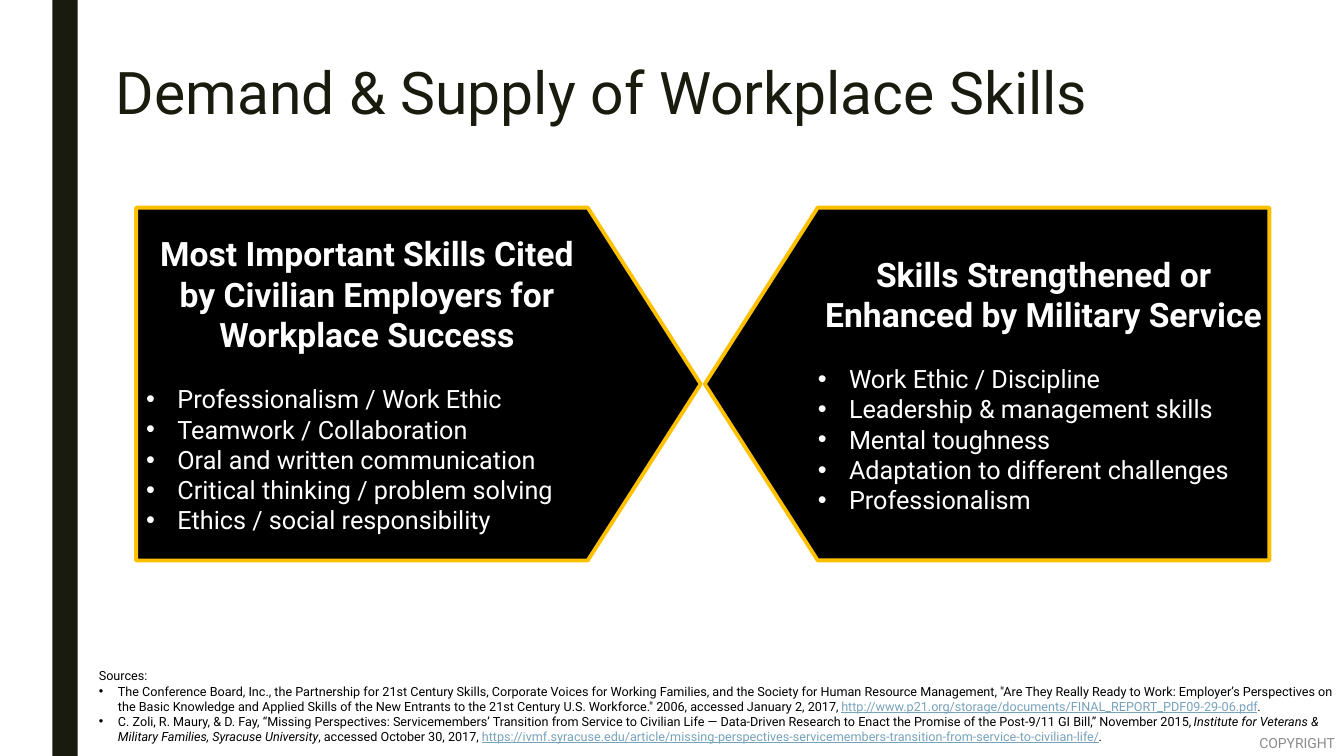
from dataclasses import dataclass
from lxml.etree import SubElement
from pptx import Presentation
from pptx.dml.color import RGBColor
from pptx.enum.shapes import MSO_SHAPE
from pptx.enum.text import MSO_ANCHOR, MSO_AUTO_SIZE, PP_ALIGN
from pptx.oxml.ns import qn
from pptx.util import Inches, Pt


@dataclass(frozen=True)
class Theme:
    font: str = "Roboto"
    dark: str = "191B0E"
    black: str = "000000"
    white: str = "FFFFFF"
    gold: str = "FFC000"
    link: str = "77A2BB"
    grey: str = "8C8C8C"
    title: int = 42
    heading: int = 24
    skill: int = 18
    copyright: int = 10
    source: int = 9


theme = Theme()


def add_run(paragraph, text, size, color, **formats):
    run = paragraph.add_run()
    run.text = text
    formats = {"name": theme.font, "size": Pt(size), **formats}
    for attribute, value in formats.items():
        setattr(run.font, attribute, value)
    run.font.color.rgb = RGBColor.from_string(color)


def set_list_style(paragraph, indent):
    paragraph.alignment = PP_ALIGN.LEFT
    paragraph.space_before = Pt(0)
    properties = paragraph._p.get_or_add_pPr()
    properties.set("marL", str(Inches(indent)))
    properties.set("indent", str(-Inches(indent)))
    if indent:
        SubElement(properties, qn("a:buFont")).set("typeface", "Arial")
        SubElement(properties, qn("a:buChar")).set("char", "•")
    else:
        SubElement(properties, qn("a:buNone"))


deck = Presentation()
deck.slide_width, deck.slide_height = Inches(13.33), Inches(7.5)
slide = deck.slides.add_slide(deck.slide_layouts[1])
title, sources = slide.placeholders

side_bar = slide.shapes.add_shape(
    MSO_SHAPE.RECTANGLE, Inches(0.52), 0, Inches(0.25), deck.slide_height)
side_bar.shadow.inherit = False
side_bar.fill.solid()
side_bar.fill.fore_color.rgb = RGBColor.from_string(theme.dark)
side_bar.line.fill.background()

copyright_mark = slide.shapes.add_textbox(0, 0, 0, 0)
text_areas = [
    (title, (1.05, 0.5, 10.84, 1.53), MSO_ANCHOR.TOP),
    (sources, (0.88, 6.58, 12.46, 0.86), MSO_ANCHOR.TOP),
    (copyright_mark, (12.23, 7.15, 1.11, 0.44), MSO_ANCHOR.MIDDLE),
]
for area, place, anchor in text_areas:
    for attribute, value in zip(("left", "top", "width", "height"), place):
        setattr(area, attribute, Inches(value))
    formats = {"word_wrap": True, "auto_size": MSO_AUTO_SIZE.NONE,
               "vertical_anchor": anchor}
    for attribute, value in formats.items():
        setattr(area.text_frame, attribute, value)

heading = title.text_frame.paragraphs[0]
heading.alignment = PP_ALIGN.LEFT
add_run(heading, "Demand & Supply of Workplace Skills", theme.title, theme.dark)

arrows = [
    (2.4, 270, "vert", 0.1,
     "Most Important Skills Cited by Civilian Employers for Workplace Success",
     ["Professionalism / Work Ethic", "Teamwork / Collaboration",
      "Oral and written communication", "Critical thinking / problem solving",
      "Ethics / social responsibility"]),
    (8.04, 90, "vert270", 0,
     "Skills Strengthened or Enhanced by Military Service",
     ["Work Ethic / Discipline", "Leadership & management skills",
      "Mental toughness", "Adaptation to different challenges",
      "Professionalism"]),
]
for left, rotation, direction, top_margin, claim, skills in arrows:
    arrow = slide.shapes.add_shape(
        MSO_SHAPE.FLOWCHART_OFFPAGE_CONNECTOR,
        Inches(left), Inches(1.01), Inches(3.5), Inches(5.6))
    arrow.rotation = rotation
    arrow.shadow.inherit = False
    arrow.fill.solid()
    arrow.fill.fore_color.rgb = RGBColor.from_string(theme.black)
    arrow.line.color.rgb = RGBColor.from_string(theme.gold)
    arrow.line.width = Pt(2.75)
    frame = arrow.text_frame
    formats = {"margin_left": 0, "margin_top": Inches(top_margin),
               "margin_right": 0, "margin_bottom": 0,
               "word_wrap": True, "vertical_anchor": MSO_ANCHOR.MIDDLE}
    for attribute, value in formats.items():
        setattr(frame, attribute, value)
    frame._txBody.bodyPr.set("vert", direction)
    claim_line = frame.paragraphs[0]
    claim_line.alignment = PP_ALIGN.CENTER
    claim_line.space_after = Pt(21)
    add_run(claim_line, claim, theme.heading, theme.white, bold=True)
    for skill in skills:
        skill_line = frame.add_paragraph()
        set_list_style(skill_line, 0.31)
        add_run(skill_line, skill, theme.skill, theme.white)

plain = {"color": theme.black}
italic = {"color": theme.black, "italic": True}
address = {"color": theme.link, "underline": True}
citations = [
    [("The Conference Board, Inc., the Partnership for 21st Century Skills, "
      "Corporate Voices for Working Families, and the Society for Human "
      "Resource Management, \"Are They Really Ready to Work: Employer’s "
      "Perspectives on the Basic Knowledge and Applied Skills of the New "
      "Entrants to the 21st Century U.S. Workforce.\" 2006, accessed "
      "January 2, 2017, ", plain),
     ("http://www.p21.org/storage/documents/FINAL_REPORT_PDF09-29-06.pdf",
      address),
     (".", plain)],
    [("C. Zoli, R. Maury, & D. Fay, “Missing Perspectives: Servicemembers’ "
      "Transition from Service to Civilian Life — Data-Driven Research to "
      "Enact the Promise of the Post-9/11 GI Bill,” November 2015, ", plain),
     ("Institute for Veterans & Military Families, Syracuse University",
      italic),
     (", accessed October 30, 2017, ", plain),
     ("https://ivmf.syracuse.edu/article/missing-perspectives-servicemembers-"
      "transition-from-service-to-civilian-life/", address),
     (".", plain)],
]
sources_label = sources.text_frame.paragraphs[0]
set_list_style(sources_label, 0)
add_run(sources_label, "Sources:", theme.source, **plain)
for citation in citations:
    citation_line = sources.text_frame.add_paragraph()
    set_list_style(citation_line, 0.19)
    for words, look in citation:
        add_run(citation_line, words, theme.source, **look)

copyright_line = copyright_mark.text_frame.paragraphs[0]
copyright_line.alignment = PP_ALIGN.RIGHT
add_run(copyright_line, "COPYRIGHT", theme.copyright, theme.grey)

deck.save("out.pptx")
